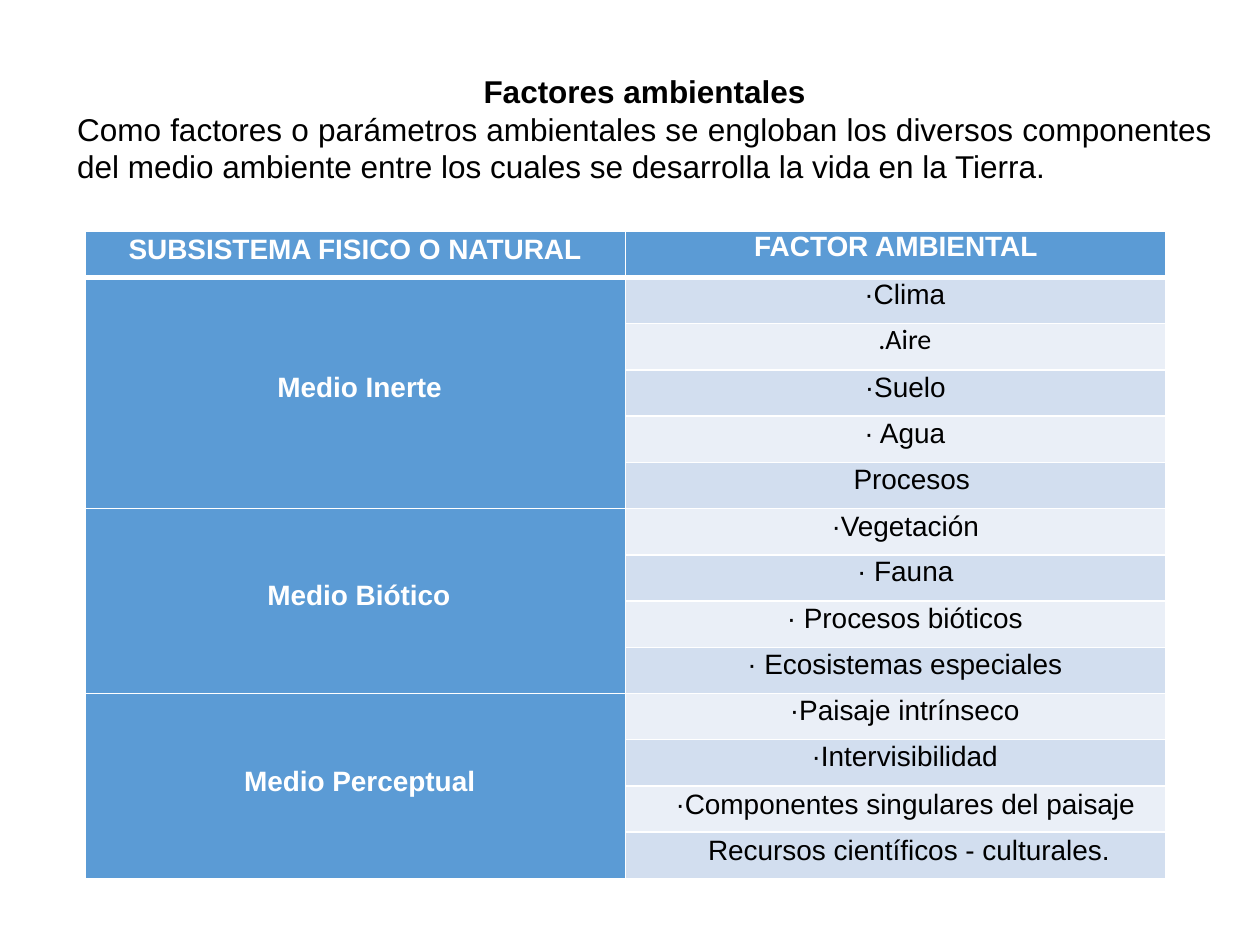
"""Build a slide with a table of environmental factors by subsystem."""
from lxml import etree
from pptx import Presentation
from pptx.dml.color import RGBColor
from pptx.enum import text
from pptx.oxml.ns import qn
from pptx.util import Cm, Pt

BLACK = RGBColor(0x00, 0x00, 0x00)
WHITE = RGBColor(0xFF, 0xFF, 0xFF)
BLUE = RGBColor(0x5B, 0x9B, 0xD5)
BANDS = [RGBColor(0xD2, 0xDE, 0xEF), RGBColor(0xEA, 0xEF, 0xF7)]


def add_run(p, content, size, color, bold=False, font="Arial"):
    r = p.add_run()
    r.text = content
    r.font.name = font
    r.font.size = Pt(size)
    r.font.bold = bold
    r.font.color.rgb = color


def fill_cell(cell, content, spacing, indent=0, before=0, color=WHITE,
              bold=True, font="Arial", anchor=text.MSO_ANCHOR.MIDDLE):
    cell.vertical_anchor = anchor
    p = cell.text_frame.paragraphs[0]
    p.alignment = text.PP_ALIGN.CENTER
    p.line_spacing = Pt(spacing)
    p.space_before = Pt(before)
    p.space_after = Pt(8)
    pPr = p._p.get_or_add_pPr()
    pPr.set("marL", str(Cm(indent)))
    pPr.set("indent", "0")
    add_run(p, content, 16, color, bold, font)


prs = Presentation()
prs.slide_width, prs.slide_height = Cm(25.4), Cm(19.05)
s = prs.slides.add_slide(prs.slide_layouts[5])

title = s.shapes.title
title.left, title.top, title.width, title.height = Cm(1.3), Cm(1.32), Cm(23.39), Cm(3.33)
tf = title.text_frame
tf.word_wrap = True
tf.auto_size = text.MSO_AUTO_SIZE.NONE
tf.vertical_anchor = text.MSO_ANCHOR.TOP
p = tf.paragraphs[0]
p.alignment = text.PP_ALIGN.CENTER
add_run(p, "Factores ambientales", 18, BLACK, bold=True)
p = tf.add_paragraph()
p.alignment = text.PP_ALIGN.JUSTIFY
add_run(p, "Como factores o parámetros ambientales se engloban los diversos componentes "
           "del medio ambiente entre los cuales se desarrolla la vida en la Tierra.", 18, BLACK)

groups = [
    ("Medio Inerte", 11.6, 0.18, 48.8, [
        ("·Clima", 11.4, 0.36), (".Aire", 11.4, 0.36), ("·Suelo", 12.2, 0.38),
        ("· Agua", 11.4, 0.36), ("Procesos", 11.3, 0.64)]),
    ("Medio Biótico", 11.8, 0.15, 37.8, [
        ("·Vegetación", 12.8, 0.38), ("· Fauna", 10.8, 0.38),
        ("· Procesos bióticos", 11.6, 0.36), ("· Ecosistemas especiales", 11.2, 0.36)]),
    ("Medio Perceptual", 12.6, 0.18, 37, [
        ("·Paisaje intrínseco", 11.6, 0.36), ("·Intervisibilidad", 10.6, 0.36),
        ("·Componentes singulares del paisaje", 12.8, 0.38),
        ("Recursos científicos - culturales.", 12.8, 0.53)]),
]
n_rows = 1 + sum(len(group[-1]) for group in groups)
table = s.shapes.add_table(n_rows, 2, Cm(1.71), Cm(4.66), Cm(21.8), Cm(13.06)).table

for i in range(n_rows):
    for j in range(2):
        cell = table.cell(i, j)
        cell.margin_left = cell.margin_right = Cm(0.02)
        cell.margin_top = cell.margin_bottom = 0
        tcPr = cell._tc.get_or_add_tcPr()
        for side in "LRTB":
            thick = (i == 0 and side == "B") or (i == 1 and side == "T")
            ln = etree.SubElement(tcPr, qn(f"a:ln{side}"), w=str(Pt(3 if thick else 1)))
            solid = etree.SubElement(ln, qn("a:solidFill"))
            etree.SubElement(solid, qn("a:srgbClr"), val=str(WHITE))
        cell.fill.solid()
        cell.fill.fore_color.rgb = BLUE if i == 0 or j == 0 else BANDS[(i - 1) % 2]

fill_cell(table.cell(0, 0), "SUBSISTEMA FISICO O NATURAL", 12.8)
fill_cell(table.cell(0, 1), "FACTOR AMBIENTAL", 17.8, anchor=text.MSO_ANCHOR.TOP)

row = 1
for name, spacing, indent, before, factors in groups:
    table.cell(row, 0).merge(table.cell(row + len(factors) - 1, 0))
    fill_cell(table.cell(row, 0), name, spacing, indent, before)
    for factor, spacing, indent in factors:
        font = "Calibri" if factor == ".Aire" else "Arial"
        fill_cell(table.cell(row, 1), factor, spacing, indent,
                  color=BLACK, bold=False, font=font)
        row += 1

prs.save("out.pptx")
